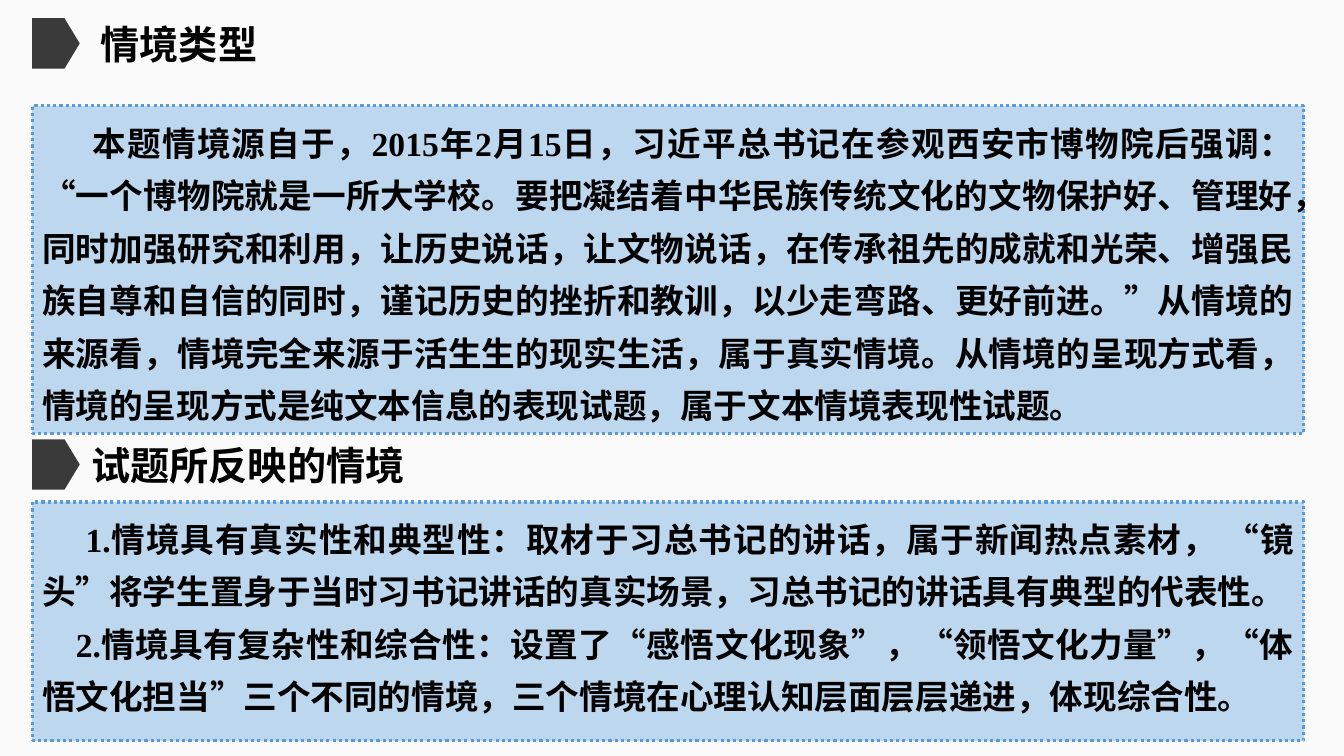
from dataclasses import dataclass

from lxml.etree import SubElement
from pptx import Presentation
from pptx.dml.color import RGBColor
from pptx.enum.dml import MSO_LINE_DASH_STYLE as Dash
from pptx.enum.shapes import MSO_SHAPE as Shape
from pptx.enum.text import MSO_ANCHOR as Anchor, PP_ALIGN as Align
from pptx.oxml.ns import qn
from pptx.util import Cm, Pt


@dataclass(frozen=True)
class Theme:
    """Colours, fonts and type sizes of the slide."""
    background: RGBColor = RGBColor(0xFA, 0xFA, 0xFA)
    panel: RGBColor = RGBColor(0xBD, 0xD7, 0xEE)
    border: RGBColor = RGBColor(0x5B, 0x9B, 0xD5)
    marker: RGBColor = RGBColor(0x3A, 0x3A, 0x3A)
    text: RGBColor = RGBColor(0, 0, 0)
    latin_font: str = "Times New Roman"
    chinese_font: str = "Noto Sans CJK SC"
    heading_size: Pt = Pt(28)
    body_size: Pt = Pt(24)
    border_width: Pt = Pt(2.25)
    line_spacing: float = 1.3


@dataclass(frozen=True)
class Box:
    """Position and size in centimetres."""
    left: float
    top: float
    width: float
    height: float

    def lengths(self):
        """Return the four values as lengths."""
        return [Cm(value) for value in (self.left, self.top, self.width, self.height)]


THEME = Theme()

SITUATION_TYPE = [
    (1.27, "本题情境源自于，2015年2月15日，习近平总书记在参观西安市博物院后强调："
           "“一个博物院就是一所大学校。要把凝结着中华民族传统文化的文物保护好、管理好，"
           "同时加强研究和利用，让历史说话，让文物说话，在传承祖先的成就和光荣、"
           "增强民族自尊和自信的同时，谨记历史的挫折和教训，以少走弯路、更好前进。”"
           "从情境的来源看，情境完全来源于活生生的现实生活，属于真实情境。"
           "从情境的呈现方式看，情境的呈现方式是纯文本信息的表现试题，"
           "属于文本情境表现性试题。"),
]
SITUATION_SHOWN = [
    (1.1, "1.情境具有真实性和典型性：取材于习总书记的讲话，属于新闻热点素材， "
          "“镜头”将学生置身于当时习书记讲话的真实场景，习总书记的讲话具有典型的代表性。"),
    (0.85, "2.情境具有复杂性和综合性：设置了“感悟文化现象”，“领悟文化力量”，"
           "“体悟文化担当”三个不同的情境，三个情境在心理认知层面层层递进，体现综合性。"),
]


def add_run(paragraph, text, size, latin_font):
    """Add one bold run with its Latin and Chinese fonts."""
    run = paragraph.add_run()
    run.text = text
    run.font.size = size
    run.font.bold = True
    run.font.name = latin_font
    run.font.color.rgb = THEME.text
    SubElement(run.font._element, qn("a:ea")).set("typeface", THEME.chinese_font)


def add_filled_shape(slide, kind, box, color):
    """Add a flat preset shape without an outline."""
    shape = slide.shapes.add_shape(kind, *box.lengths())
    shape.shadow.inherit = False
    shape.fill.solid()
    shape.fill.fore_color.rgb = color
    shape.line.fill.background()
    return shape


def add_heading(slide, box, title, title_offset, title_width):
    """Place an arrow marker at the box and the title beside it."""
    marker = add_filled_shape(slide, Shape.PENTAGON, box, THEME.marker)
    marker.adjustments[0] = 0.32
    title_box = Box(box.left + title_offset, box.top - 0.08, title_width, 1.45)
    frame = slide.shapes.add_textbox(*title_box.lengths()).text_frame
    frame.word_wrap = False
    paragraph = frame.paragraphs[0]
    paragraph.alignment = Align.CENTER
    add_run(paragraph, title, THEME.heading_size, THEME.chinese_font)


def add_panel(slide, box, entries):
    """Fill the box with a dotted panel of indented paragraphs."""
    panel = add_filled_shape(slide, Shape.RECTANGLE, box, THEME.panel)
    panel.line.color.rgb = THEME.border
    panel.line.width = THEME.border_width
    panel.line.dash_style = Dash.ROUND_DOT
    frame = panel.text_frame
    frame.word_wrap = True
    frame.vertical_anchor = Anchor.TOP
    for index, (indent, text) in enumerate(entries):
        paragraph = frame.add_paragraph() if index else frame.paragraphs[0]
        paragraph.alignment = Align.JUSTIFY
        paragraph.line_spacing = THEME.line_spacing
        paragraph._p.get_or_add_pPr().set("indent", str(Cm(indent)))
        add_run(paragraph, text, THEME.body_size, THEME.latin_font)


def main():
    """Build and save the slide."""
    presentation = Presentation()
    presentation.slide_width = Cm(33.87)
    presentation.slide_height = Cm(19.05)
    slide = presentation.slides.add_slide(presentation.slide_layouts[6])
    slide.background.fill.solid()
    slide.background.fill.fore_color.rgb = THEME.background

    left, panel_width = 0.81, 32.05
    add_heading(slide, Box(left, 0.46, 1.2, 1.27), "情境类型", 0.18, 7.04)
    add_panel(slide, Box(left, 2.67, panel_width, 8.25), SITUATION_TYPE)
    add_heading(slide, Box(left, 11.07, 1.2, 1.27), "试题所反映的情境", 1.2, 8.48)
    add_panel(slide, Box(left, 12.65, panel_width, 6.02), SITUATION_SHOWN)
    presentation.save("out.pptx")


if __name__ == "__main__":
    main()
